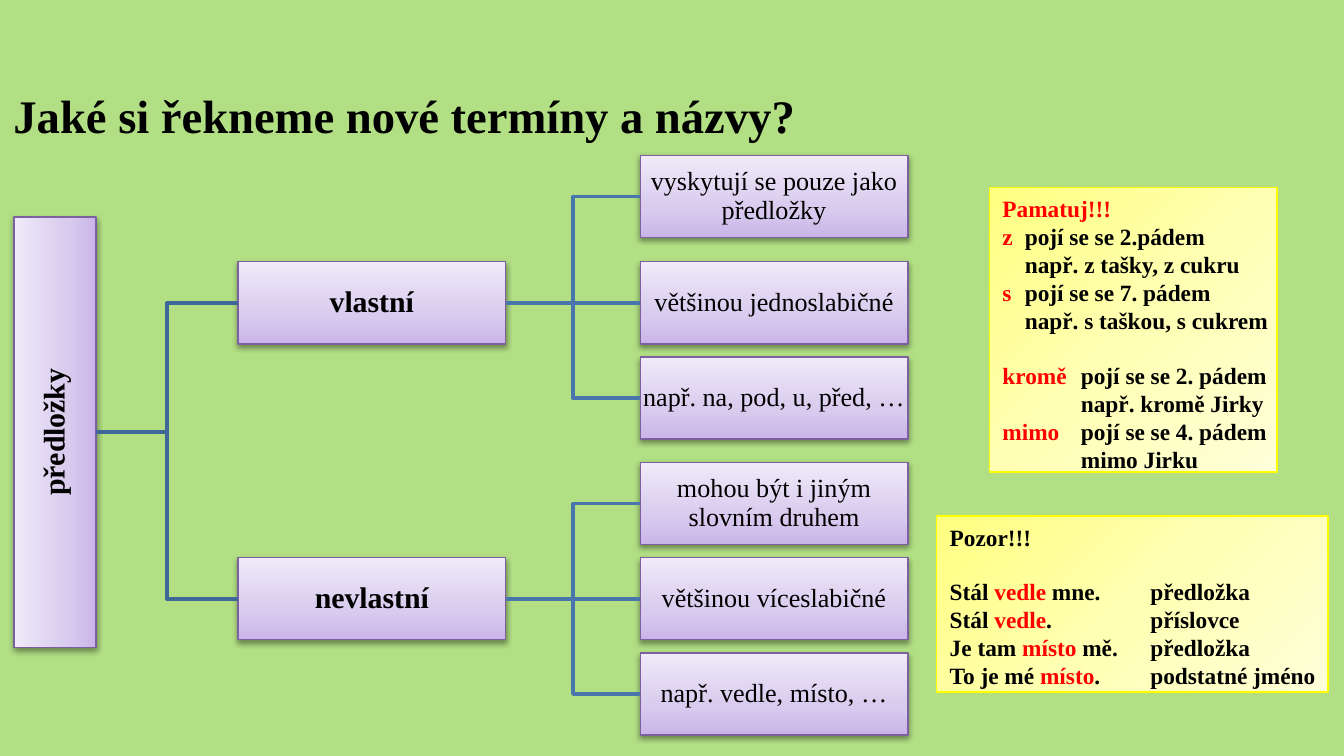
from pptx import Presentation
from pptx.dml.color import RGBColor as RGB
from pptx.enum.shapes import MSO_CONNECTOR as CONN, MSO_SHAPE as SHAPE
from pptx.enum.text import MSO_ANCHOR as ANCHOR, MSO_AUTO_SIZE as FIT, PP_ALIGN as ALIGN
from pptx.oxml import parse_xml
from pptx.oxml.ns import nsdecls, qn
from pptx.util import Pt

COLORS = {
    "background": "B2DF84", "text": "000000", "accent": "FF0000",
    "node_line": "7D60A0", "note_line": "FFFF00",
    "trunk": "3F6797", "twig": "4875AC",
}
NODE_STOPS = {0: "C9B5E8", 35: "D8CBEE", 100: "F0EAF9"}
NOTE_STOPS = {0: "FFFF80", 50: "FFFFB3", 100: "FFFFDA"}
FONT = "Times New Roman"

BRANCHES = [
    ("vlastní", [
        (0, "vyskytují se pouze jako předložky"),
        (57, "většinou jednoslabičné"),
        (108, "např. na, pod, u, před, …"),
    ]),
    ("nevlastní", [
        (164.5, "mohou být i jiným slovním druhem"),
        (215.5, "většinou víceslabičné"),
        (266.5, "např. vedle, místo, …"),
    ]),
]
REMEMBER = [
    "*Pamatuj!!!*",
    "*z*\tpojí se se 2.pádem",
    "\tnapř. z tašky, z cukru",
    "*s*\tpojí se se 7. pádem",
    "\tnapř. s taškou, s cukrem",
    "*kromě*\tpojí se se 2. pádem",
    "\t\tnapř. kromě Jirky",
    "*mimo*\tpojí se se 4. pádem",
    "\t\tmimo Jirku",
]
BEWARE = [
    "Pozor!!!",
    "Stál *vedle* mne.\tpředložka",
    "Stál *vedle*.\tpříslovce",
    "Je tam *místo* mě.\tpředložka",
    "To je mé *místo*.\tpodstatné jméno",
]


def add_run(p, text, size, bold, color="text"):
    r = p.add_run()
    r.text = text
    for name, value in {"name": FONT, "size": Pt(size), "bold": bold}.items():
        setattr(r.font, name, value)
    r.font.color.rgb = RGB.from_string(COLORS[color])


def format_frame(tf, **values):
    for name, value in values.items():
        setattr(tf, name, value)


def add_box(slide, box, stops, angle, line):
    s = slide.shapes.add_shape(SHAPE.RECTANGLE, *map(Pt, box))
    s.shadow.inherit = False
    s.fill.gradient()
    spPr = s._element.spPr
    gs = "".join(f'<a:gs pos="{pos * 1000}"><a:srgbClr val="{c}"/></a:gs>'
                 for pos, c in stops.items())
    spPr.replace(spPr.find(qn("a:gradFill")), parse_xml(
        f'<a:gradFill {nsdecls("a")} rotWithShape="1"><a:gsLst>{gs}</a:gsLst>'
        f'<a:lin ang="{angle * 60000}" scaled="0"/></a:gradFill>'))
    s.line.color.rgb = RGB.from_string(COLORS[line])
    s.line.width = Pt(0.75)
    return s


def add_node(slide, box, text, size, bold, vertical=False):
    s = add_box(slide, box, NODE_STOPS, 180 if vertical else 270, "node_line")
    s._element.spPr.find(qn("a:effectLst")).append(parse_xml(
        f'<a:outerShdw {nsdecls("a")} blurRad="{Pt(3.1)}" dist="{Pt(1.6)}" '
        'dir="5400000" rotWithShape="0"><a:srgbClr val="000000">'
        '<a:alpha val="38000"/></a:srgbClr></a:outerShdw>'))
    tf = s.text_frame
    margins = dict.fromkeys(
        ("margin_left", "margin_top", "margin_right", "margin_bottom"), Pt(0.7))
    format_frame(tf, word_wrap=True, vertical_anchor=ANCHOR.MIDDLE, **margins)
    if vertical:
        tf._txBody.bodyPr.set("vert", "vert270")
    p = tf.paragraphs[0]
    p.alignment = ALIGN.CENTER
    p.line_spacing = 0.9
    add_run(p, text, size, bold)
    return s


def join(slide, parent, child, color):
    level = parent.top + parent.height // 2 == child.top + child.height // 2
    c = slide.shapes.add_connector(
        CONN.STRAIGHT if level else CONN.ELBOW, 0, 0, 0, 0)
    c.begin_connect(parent, 3)
    c.end_connect(child, 1)
    c.line.color.rgb = RGB.from_string(COLORS[color])
    c.line.width = Pt(2)
    c._element.spPr.append(parse_xml(f'<a:effectLst {nsdecls("a")}/>'))


def add_title(slide, box, text):
    sp = slide.shapes.title
    places = zip(("left", "top", "width", "height"), map(Pt, box))
    for name, value in places:
        setattr(sp, name, value)
    tf = sp.text_frame
    format_frame(tf, word_wrap=True, auto_size=FIT.NONE,
                 vertical_anchor=ANCHOR.MIDDLE)
    p = tf.paragraphs[0]
    p.alignment = ALIGN.LEFT
    add_run(p, text, 25, True)


def add_tree(slide, box, root_text, branches):
    x, y, w, h = box
    node_w, node_h, root_h = 143.5, 44, 230.5
    root = add_node(slide, (x, y + 33, node_h, root_h), root_text, 16, True, True)
    for name, leaves in branches:
        middle = leaves[len(leaves) // 2][0]
        branch = add_node(slide, (x + 120, y + middle, node_w, node_h),
                          name, 16, True)
        join(slide, root, branch, "trunk")
        for top, text in leaves:
            leaf = add_node(slide, (x + w - node_w, y + top, node_w, node_h),
                            text, 14, False)
            join(slide, branch, leaf, "twig")


def add_note(slide, box, rows, gap_before, tabs):
    s = add_box(slide, box, NOTE_STOPS, 45, "note_line")
    tf = s.text_frame
    format_frame(tf, word_wrap=True, vertical_anchor=ANCHOR.TOP, margin_right=0)
    stops = "".join(f'<a:tab pos="{Pt(t)}" algn="l"/>' for t in tabs)
    for i, row in enumerate(rows):
        p = tf.paragraphs[0] if i == 0 else tf.add_paragraph()
        p.alignment = ALIGN.LEFT
        if i == gap_before:
            p.space_before = Pt(14.4)
        p._p.get_or_add_pPr().append(
            parse_xml(f'<a:tabLst {nsdecls("a")}>{stops}</a:tabLst>'))
        for k, part in enumerate(row.split("*")):
            if part:
                add_run(p, part, 12.5, True, "accent" if k % 2 else "text")


def main():
    prs = Presentation()
    prs.slide_width, prs.slide_height = Pt(720), Pt(405)
    slide = prs.slides.add_slide(prs.slide_layouts[0])
    subtitle = slide.placeholders[1].element
    subtitle.getparent().remove(subtitle)
    fill = slide.background.fill
    fill.solid()
    fill.fore_color.rgb = RGB.from_string(COLORS["background"])

    add_title(slide, (0, 38, 564.5, 47), "Jaké si řekneme nové termíny a názvy?")
    add_tree(slide, (7.5, 83.3, 479, 310.5), "předložky", BRANCHES)
    add_note(slide, (530, 100.6, 154.2, 152.4), REMEMBER, 5, (12, 42))
    add_note(slide, (501.7, 276.5, 209.8, 94.2), BEWARE, 1, (107.5,))
    prs.save("out.pptx")


if __name__ == "__main__":
    main()
